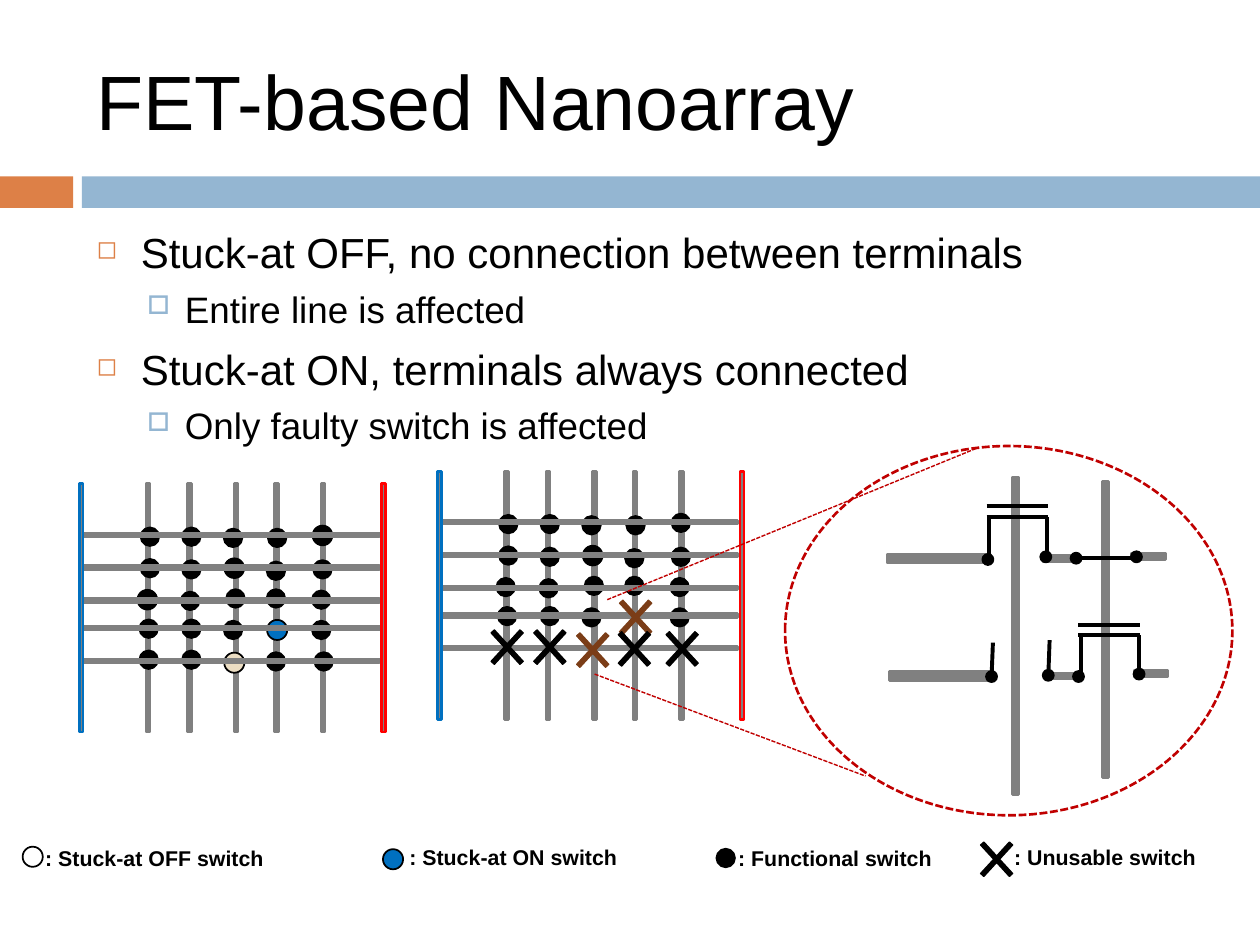
from lxml.etree import SubElement
from pptx import Presentation
from pptx.dml.color import RGBColor
from pptx.enum.dml import MSO_LINE
from pptx.enum.shapes import MSO_CONNECTOR, MSO_SHAPE
from pptx.enum.text import MSO_ANCHOR
from pptx.oxml.ns import qn
from pptx.util import Pt

THEME = {
    "font": "Arial", "title": 44, "legend": 12.2,
    "black": "000000", "white": "FFFFFF", "orange": "DD8047", "band": "94B6D2",
    "wire": "808080", "blue": "0070C0", "red": "FF0000", "zoom": "C00000",
    "beige": "EBDDC3", "brown": "7B3D17",
}
TITLE = "FET-based Nanoarray"
BODY = [
    (0, "Stuck-at OFF, no connection between terminals"),
    (1, "Entire line is affected"),
    (0, "Stuck-at ON, terminals always connected"),
    (1, "Only faulty switch is affected"),
]
LEVELS = [
    {"size": 24, "before": 7, "left": 25.2, "hang": 25.2, "char": "◻", "color": "orange", "pct": 60},
    {"size": 21, "before": 5.5, "left": 50.4, "hang": 21.6, "char": "□", "color": "band", "pct": 70},
]
BANDS = [(0, 41.8, "orange"), (46.8, 673.2, "band")]

SWITCHES = {
    "f": (10.1, "black", 1.5), "F": (11.5, "black", 0.75),
    "n": (11.5, "blue", 1), "o": (11.5, "beige", 1), "w": (11.5, "white", 1),
}
CROSSES = {"x": "black", "b": "brown"}
LEGEND = [
    (": Stuck-at OFF switch", "w", 18.7, 489.6, 18.7, 479.5),
    (": Stuck-at ON switch", "n", 224.6, 491, 226.8, 478.8),
    (": Functional switch", "f", 414.7, 490.3, 414.7, 479.5),
    (": Unusable switch", "x", 569.5, 491, 572.4, 478.8),
]

COLUMNS = [84.6, 108.4, 135, 158, 184.7]
ROWS = [305.6, 324.4, 343.1, 358.9, 377.6]
RAILS = [(46.4, "blue"), (219.2, "red")]
SWITCH_CENTERS = [
    [(85.7, 306.7), (109.4, 306.7), (133.2, 307.4), (158.4, 307.4), (184.3, 306)],
    [(85.7, 324.7), (109.4, 325.4), (133.9, 324.7), (157.7, 326.2), (184.3, 325.4)],
    [(84.2, 342.7), (108.7, 343.4), (134.6, 342), (157.7, 342), (183.6, 342.7)],
    [(85, 359.3), (109.4, 359.3), (133.2, 360), (158.4, 360), (183.6, 360)],
    [(85, 377), (109.4, 377), (133.9, 378.7), (157.7, 378), (185, 378)],
]
ARRAYS = [
    (0, 0, ["ffffF", "ffFff", "Fffff", "fffnf", "ffoff"]),
    (204.8, -7.2, ["fffff", "ffFff", "fffff", "fffbf", "xxbxx"]),
]

ZOOM = (448.6, 254.9, 255.6, 211)
CALLOUTS = [(347, 342.7, 559.4, 255.6), (339.8, 385.2, 494.6, 443.5)]
ZOOM_BARS = [
    (630, 275, 3.6, 169.2), (578.5, 272.5, 3.6, 181.4),
    (646.6, 316.1, 19.4, 3.6), (596.2, 317.5, 19.4, 3.6), (506.9, 316.8, 59, 5),
    (648, 383, 19.4, 3.6), (597.6, 384.5, 19.4, 3.6), (508.3, 383.8, 59, 5),
]
GATES = [(563.8, 289.4), (616.3, 357.1)]
ZOOM_LINES = [
    (613.4, 319, 648.7, 319), (567.4, 367.2, 566.6, 387.4), (599.8, 365.8, 599, 387.4),
]
TERMINALS = [
    (564.5, 319.7), (597.6, 318.2), (614.9, 319), (649.4, 318.2),
    (650.9, 385.2), (616.3, 386.6), (599, 385.9), (566.6, 386.6),
]

prs = Presentation()
prs.slide_width, prs.slide_height = Pt(720), Pt(540)
s = prs.slides.add_slide(prs.slide_layouts[6])


def rgb(name):
    return RGBColor.from_string(THEME[name])


def shape(kind, x, y, w, h, fill=None, line=None, width=1.5):
    sp = s.shapes.add_shape(kind, Pt(x), Pt(y), Pt(w), Pt(h))
    sp.shadow.inherit = False
    if fill:
        sp.fill.solid()
        sp.fill.fore_color.rgb = rgb(fill)
    else:
        sp.fill.background()
    if line:
        sp.line.color.rgb = rgb(line)
        sp.line.width = Pt(width)
    else:
        sp.line.fill.background()
    return sp


def bar(x, y, w, h, line="wire"):
    shape(MSO_SHAPE.RECTANGLE, x, y, w, h, "wire", line)


def dot(cx, cy, size, fill, width):
    shape(MSO_SHAPE.OVAL, cx - size / 2, cy - size / 2, size, size, fill, "black", width)


def mark(kind, cx, cy):
    if kind in CROSSES:
        color = CROSSES[kind]
        sp = shape(MSO_SHAPE.MATH_MULTIPLY, cx - 15.8, cy - 17.3, 31.7, 34.6, color, color, 0.75)
        sp.adjustments[0] = 0.079
    else:
        dot(cx, cy, *SWITCHES[kind])


def line(x1, y1, x2, y2, color="black", width=2.25):
    c = s.shapes.add_connector(MSO_CONNECTOR.STRAIGHT, Pt(x1), Pt(y1), Pt(x2), Pt(y2))
    c.line.color.rgb = rgb(color)
    c.line.width = Pt(width)
    SubElement(c._element.spPr, qn("a:effectLst"))
    return c


def style(p, size, bold=False):
    for r in p.runs:
        r.font.name, r.font.size, r.font.bold = THEME["font"], Pt(size), bold
        r.font.color.rgb = rgb("black")


def textbox(x, y, w, h, text):
    tf = s.shapes.add_textbox(Pt(x), Pt(y), Pt(w), Pt(h)).text_frame
    tf.word_wrap = True
    tf.text = text
    return tf


def bullet(p, level):
    p.space_before = Pt(level["before"])
    pPr = p._p.get_or_add_pPr()
    pPr.set("marL", str(Pt(level["left"])))
    pPr.set("indent", str(-Pt(level["hang"])))
    SubElement(SubElement(pPr, qn("a:buClr")), qn("a:srgbClr"), val=THEME[level["color"]])
    SubElement(pPr, qn("a:buSzPct"), val=str(level["pct"] * 1000))
    SubElement(pPr, qn("a:buChar"), char=level["char"])


def array(dx, dy, grid):
    marks = [(kind, cx + dx, cy + dy)
             for kinds, centers in zip(grid, SWITCH_CENTERS)
             for kind, (cx, cy) in zip(kinds, centers)]
    for x in COLUMNS:
        bar(x + dx - 1.1, 276.5 + dy, 2.2, 141.8)
    for m in marks:
        if m[0] in SWITCHES:
            mark(*m)
    for y in ROWS:
        bar(47.5 + dx, y + dy - 1.1, 169.2, 2.2)
    for x, color in RAILS:
        bar(x + dx - 1.1, 276.5 + dy, 2.2, 141.8, color)
    for m in marks:
        if m[0] in CROSSES:
            mark(*m)


def gate(x, y):
    for top in (y, y + 6):
        line(x, top, x + 35.3, top)
    for leg in (x + 1.4, x + 34.6):
        line(leg, y + 6, leg, y + 27)


for x, w, color in BANDS:
    shape(MSO_SHAPE.RECTANGLE, x, 100.8, w, 18, color)

tf = textbox(48.2, 18, 642.2, 77.8, TITLE)
tf.vertical_anchor = MSO_ANCHOR.MIDDLE
style(tf.paragraphs[0], THEME["title"])

tf = textbox(48.2, 126, 666, 134.6, "\n".join(text for _, text in BODY))
for p, (depth, _) in zip(tf.paragraphs, BODY):
    p.level = depth
    bullet(p, LEVELS[depth])
    style(p, LEVELS[depth]["size"])

for text, kind, cx, cy, x, y in LEGEND:
    mark(kind, cx, cy)
    style(textbox(x, y, 147.6, 22.3, text).paragraphs[0], THEME["legend"], True)

for layout in ARRAYS:
    array(*layout)

shape(MSO_SHAPE.OVAL, *ZOOM, line="zoom").line.dash_style = MSO_LINE.SQUARE_DOT
for ends in CALLOUTS:
    line(*ends, "zoom", 0.79).line.dash_style = MSO_LINE.SQUARE_DOT
for box in ZOOM_BARS:
    bar(*box)
for corner in GATES:
    gate(*corner)
for ends in ZOOM_LINES:
    line(*ends)
for center in TERMINALS:
    dot(*center, 5.8, "black", 1.5)

prs.save("out.pptx")
